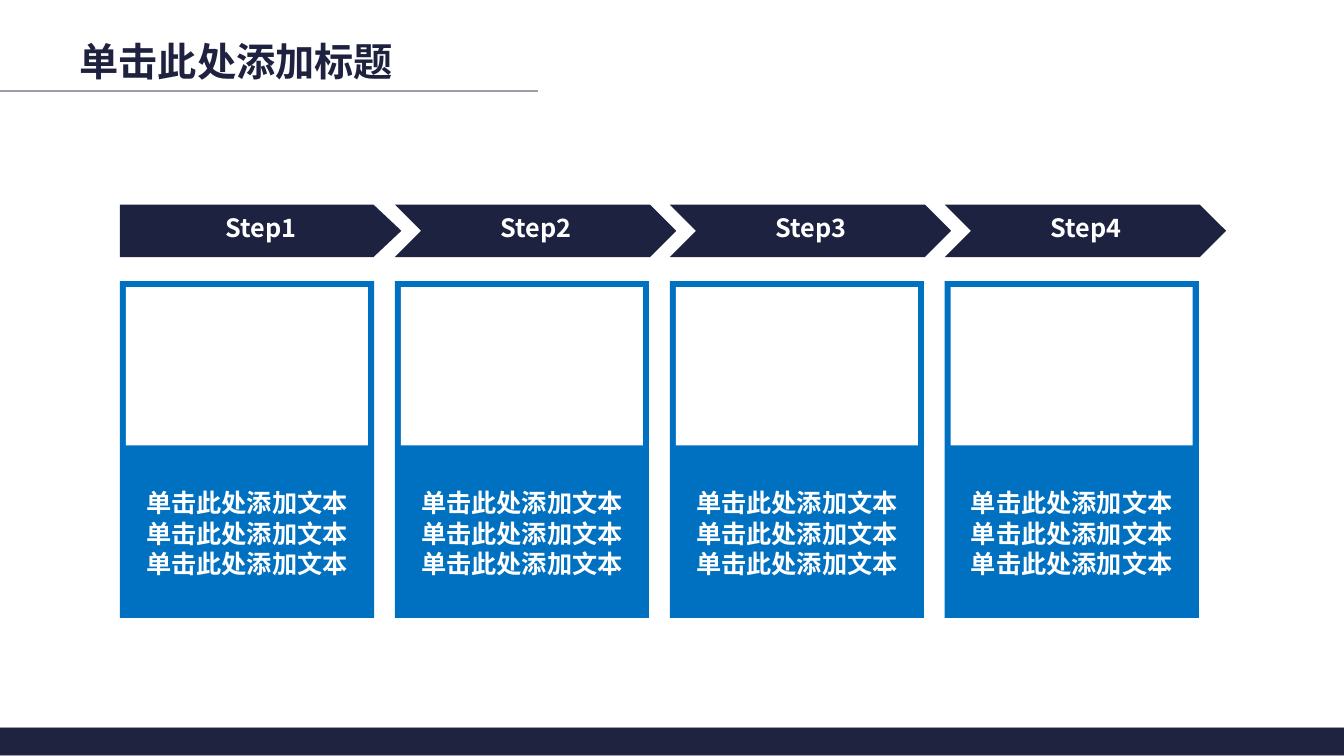
from lxml import etree
from pptx import Presentation
from pptx import util as u
from pptx.dml.color import RGBColor
from pptx.enum import shapes, text
from pptx.oxml.ns import qn

NAVY, BLUE, GREY, WHITE = "1E2241", "0070C0", "9D9DA9", "FFFFFF"
STEPS = ["Step1", "Step2", "Step3", "Step4"]
PROMPT = "单击此处添加文本"
BODY = [PROMPT, PROMPT * 2]


def color(value):
    """Turn a hex string into a colour."""
    return RGBColor.from_string(value)


def inches(*lengths):
    """Turn numbers into lengths in inches."""
    return [u.Inches(n) for n in lengths]


def write(sp, lines, size=18, font="Calibri", fill=WHITE, align=text.PP_ALIGN.CENTER):
    """Fill a shape with bold paragraphs, one for each line."""
    tf = sp.text_frame
    tf.word_wrap = True
    tf.auto_size = text.MSO_AUTO_SIZE.NONE
    tf.vertical_anchor = text.MSO_ANCHOR.TOP
    for i, line in enumerate(lines):
        p = tf.paragraphs[0] if i == 0 else tf.add_paragraph()
        p.alignment = align
        r = p.add_run()
        r.text = line
        r.font.name, r.font.size, r.font.bold = font, u.Pt(size), True
        r.font.color.rgb = color(fill)
        etree.SubElement(r.font._element, qn("a:ea"), typeface=font)


def block(parent, kind, box, fill, line=None):
    """Add a flat filled shape, with a thin outline if one is given."""
    sp = parent.add_shape(kind, *inches(*box))
    sp.shadow.inherit = False
    sp.fill.solid()
    sp.fill.fore_color.rgb = color(fill)
    if line:
        sp.line.color.rgb = color(line)
        sp.line.width = u.Pt(0.75)
    else:
        sp.line.fill.background()
    return sp


def header(s, x, y, w, h):
    """Place the title and the rule that runs under it from the slide edge."""
    sp = s.shapes.title
    sp.left, sp.top, sp.width, sp.height = inches(x, y, w, h)
    write(sp, ["单击此处添加标题"], size=28, fill="1E223F", align=text.PP_ALIGN.LEFT)
    rule = s.shapes.add_connector(shapes.MSO_CONNECTOR.STRAIGHT, *inches(0, 0.9, 5.34, 0.9))
    rule.line.color.rgb = color(GREY)
    rule.line.width = u.Pt(1.5)
    etree.SubElement(rule._element.spPr, qn("a:effectLst"))


def arrow(s, x, y, w, h, label, first):
    """Place one step arrow with its label; the first has a flat tail."""
    kind = shapes.MSO_SHAPE.PENTAGON if first else shapes.MSO_SHAPE.CHEVRON
    parts = s.shapes.add_group_shape().shapes
    sp = block(parts, kind, (x, y, w, h), NAVY)
    sp.adjustments[0] = 0.53 if first else 0.5
    caption = parts.add_textbox(*inches(x + 0.39, y + 0.03, w - 0.77, 0.45))
    write(caption, [label], font="Noto Sans CJK SC")


def card(s, x, y, w, h):
    """Place one card: a blank window above centred text."""
    parts = s.shapes.add_group_shape().shapes
    rect = shapes.MSO_SHAPE.RECTANGLE
    block(parts, rect, (x, y, w, h), BLUE)
    block(parts, rect, (x + 0.06, y + 0.06, w - 0.12, 1.57), WHITE)
    write(parts.add_textbox(*inches(x + 0.14, y + 2, w - 0.28, 1)), BODY)


def process(s, x, y, pitch):
    """Lay out the arrows and the cards under them in equal columns."""
    for i, label in enumerate(STEPS):
        left = x + i * pitch
        arrow(s, left, y, 2.79, 0.52, label, i == 0)
        card(s, left, y + 0.76, 2.52, 3.34)


def main():
    """Build the slide and save it."""
    prs = Presentation()
    prs.slide_width, prs.slide_height = inches(13.33, 7.5)
    s = prs.slides.add_slide(prs.slide_layouts[5])
    block(s.shapes, shapes.MSO_SHAPE.RECTANGLE, (-0.03, 7.22, 13.37, 0.28), "1F2340", GREY)
    header(s, 0.69, 0.32, 4.22, 0.57)
    process(s, 1.19, 2.03, (9.37 - 1.19) / (len(STEPS) - 1))
    prs.save("out.pptx")


if __name__ == "__main__":
    main()
